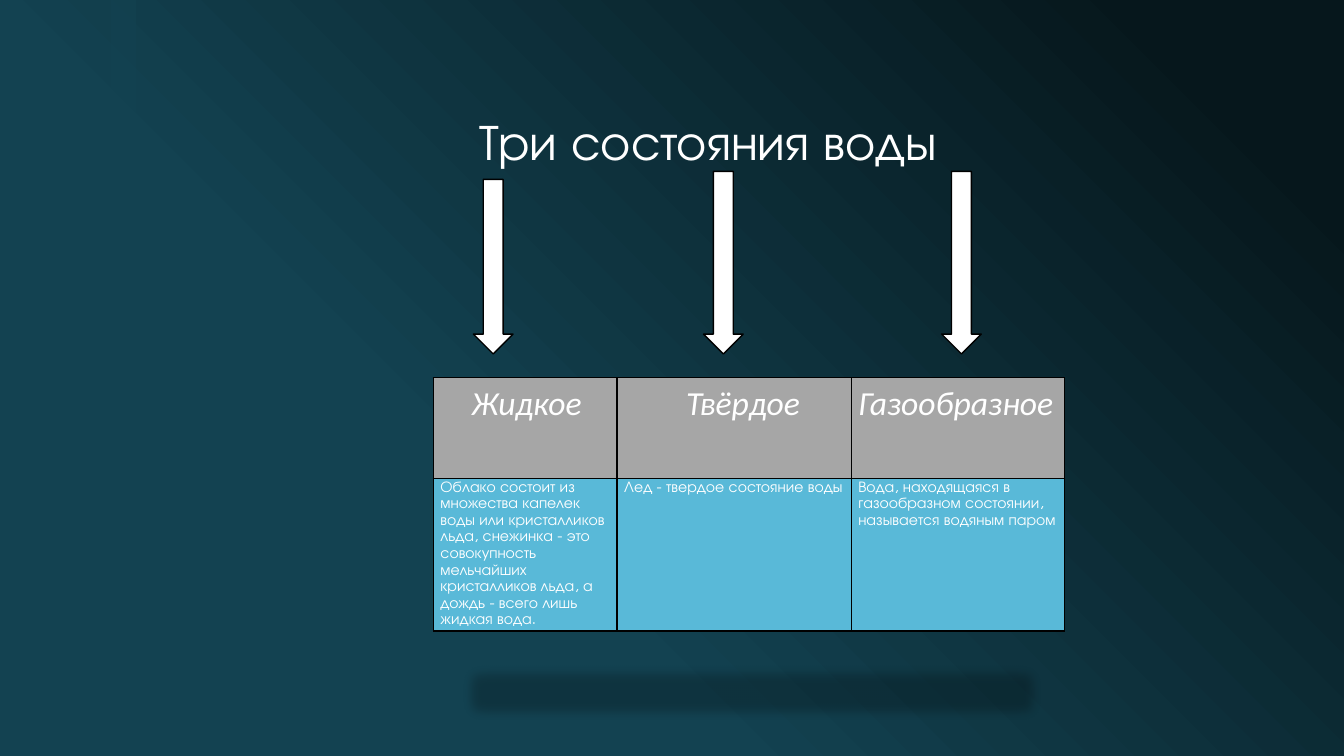
from dataclasses import dataclass

from lxml import etree
from pptx import Presentation
from pptx.dml.color import RGBColor
from pptx.enum.shapes import MSO_SHAPE
from pptx.enum.text import MSO_ANCHOR, PP_ALIGN
from pptx.oxml.ns import qn
from pptx.util import Cm, Pt

RECTANGLE, DOWN_ARROW = MSO_SHAPE.RECTANGLE, MSO_SHAPE.DOWN_ARROW
LEFT, BOTTOM = PP_ALIGN.LEFT, MSO_ANCHOR.BOTTOM

TITLE = "Три состояния воды"
# heading, heading indent (cm), description, column width (cm)
STATES = [
    ("Жидкое", 0.78,
     "Облако состоит из множества капелек воды или кристалликов льда, "
     "снежинка - это совокупность мельчайших кристалликов льда, "
     "а дождь - всего лишь жидкая вода.", 4.63),
    ("Твёрдое", 1.56, "Лед - твердое состояние воды", 5.9),
    ("Газообразное", 0,
     "Вода, находящаяся в газообразном состоянии, "
     "называется водяным паром", 5.38),
]
ARROWS = [(11.93, 4.52), (17.73, 4.32), (23.73, 4.32)]  # left, top (cm)
ARROW_WIDTH, ARROW_BOTTOM = 1, 8.92
TABLE_LEFT, TABLE_TOP = 10.92, 9.52
ROW_HEIGHTS = (2.54, 3.84)
CELL_INSET = 0.18


@dataclass(frozen=True)
class Theme:
    dark: str = "06171C"
    teal: str = "134251"
    white: str = "FFFFFF"
    black: str = "000000"
    heading_fill: str = "A6A6A6"
    body_fill: str = "59B9D8"
    font: str = "TeX Gyre Adventor"
    heading_font: str = "Calibri"
    title_size: int = 36
    heading_size: int = 24
    body_size: int = 11
    line_width: int = 1


THEME = Theme()


def colour(value):
    return RGBColor.from_string(value)


def write_text(frame, text, size, font=THEME.font, italic=False,
               line_spacing=1.15, space_after=10):
    para = frame.paragraphs[0]
    para.alignment = LEFT
    para.line_spacing = line_spacing
    para.space_after = Pt(space_after)
    span = para.add_run()
    span.text = text
    span.font.name = font
    span.font.size = Pt(size)
    span.font.bold = False
    span.font.italic = italic
    span.font.color.rgb = colour(THEME.white)


def add_filled(page, kind, left, top, width, height, fill, opacity=100):
    shape = page.shapes.add_shape(kind, Cm(left), Cm(top), Cm(width), Cm(height))
    shape.shadow.inherit = False
    shape.fill.solid()
    shape.fill.fore_color.rgb = colour(fill)
    shape.line.fill.background()
    if opacity < 100:
        tint = shape.fill._xPr.find(".//" + qn("a:srgbClr"))
        etree.SubElement(tint, qn("a:alpha"), val=str(opacity * 1000))
    return shape


def add_borders(cell):
    """Line all four sides; must run before the cell gets its fill."""
    properties = cell._tc.get_or_add_tcPr()
    for side in ("lnL", "lnR", "lnT", "lnB"):
        line = etree.SubElement(properties, qn("a:" + side),
                                w=str(Pt(THEME.line_width)))
        solid = etree.SubElement(line, qn("a:solidFill"))
        etree.SubElement(solid, qn("a:srgbClr"), val=THEME.black)


def format_cell(cell, text, fill, indent=0, **text_format):
    add_borders(cell)
    cell.fill.solid()
    cell.fill.fore_color.rgb = colour(fill)
    cell.margin_left = Cm(CELL_INSET + indent)
    cell.margin_right = Cm(CELL_INSET)
    cell.margin_top = cell.margin_bottom = 0
    write_text(cell.text_frame, text, **text_format)


def add_background(page):
    fill = page.background.fill
    fill.gradient()
    fill.gradient_angle = 225
    stops = ((0.1, THEME.dark), (0.65, THEME.teal))
    for stop, (position, value) in zip(fill.gradient_stops, stops):
        stop.position = position
        stop.color.rgb = colour(value)
    add_filled(page, RECTANGLE, 2.79, 0, 0.64, 19.05, THEME.teal, opacity=60)


def add_title(page):
    title = page.shapes.title
    title.left, title.top, title.width, title.height = (
        Cm(5.49), Cm(1.07), Cm(25.4), Cm(3.38))
    frame = title.text_frame
    frame.vertical_anchor = BOTTOM
    frame.margin_left = Cm(6.6)
    write_text(frame, TITLE, THEME.title_size, line_spacing=0.9, space_after=0)


def add_arrows(page):
    for left, top in ARROWS:
        arrow = add_filled(page, DOWN_ARROW, left, top, ARROW_WIDTH,
                           ARROW_BOTTOM - top, THEME.white)
        arrow.line.color.rgb = colour(THEME.black)
        arrow.line.width = Pt(THEME.line_width)


def add_table_shadow(page):
    shadow = add_filled(page, RECTANGLE, 11.5, 16.6, 14.9, 1.7,
                        THEME.black, opacity=22)
    effects = shadow._element.spPr.find(qn("a:effectLst"))
    etree.SubElement(effects, qn("a:softEdge"), rad=str(Cm(0.3)))


def add_states_table(page):
    table = page.shapes.add_table(
        len(ROW_HEIGHTS), len(STATES), Cm(TABLE_LEFT), Cm(TABLE_TOP),
        Cm(sum(state[-1] for state in STATES)), Cm(sum(ROW_HEIGHTS))).table
    table.first_row = table.horz_banding = False
    for row, height in zip(table.rows, ROW_HEIGHTS):
        row.height = Cm(height)
    for index, (heading, indent, description, width) in enumerate(STATES):
        table.columns[index].width = Cm(width)
        format_cell(table.cell(0, index), heading, THEME.heading_fill, indent,
                    size=THEME.heading_size, font=THEME.heading_font, italic=True)
        format_cell(table.cell(1, index), description, THEME.body_fill,
                    size=THEME.body_size)


def main():
    deck = Presentation()
    deck.slide_width, deck.slide_height = Cm(33.87), Cm(19.05)
    page = deck.slides.add_slide(deck.slide_layouts[5])
    add_background(page)
    add_title(page)
    add_arrows(page)
    add_table_shadow(page)
    add_states_table(page)
    deck.save("out.pptx")


if __name__ == "__main__":
    main()
